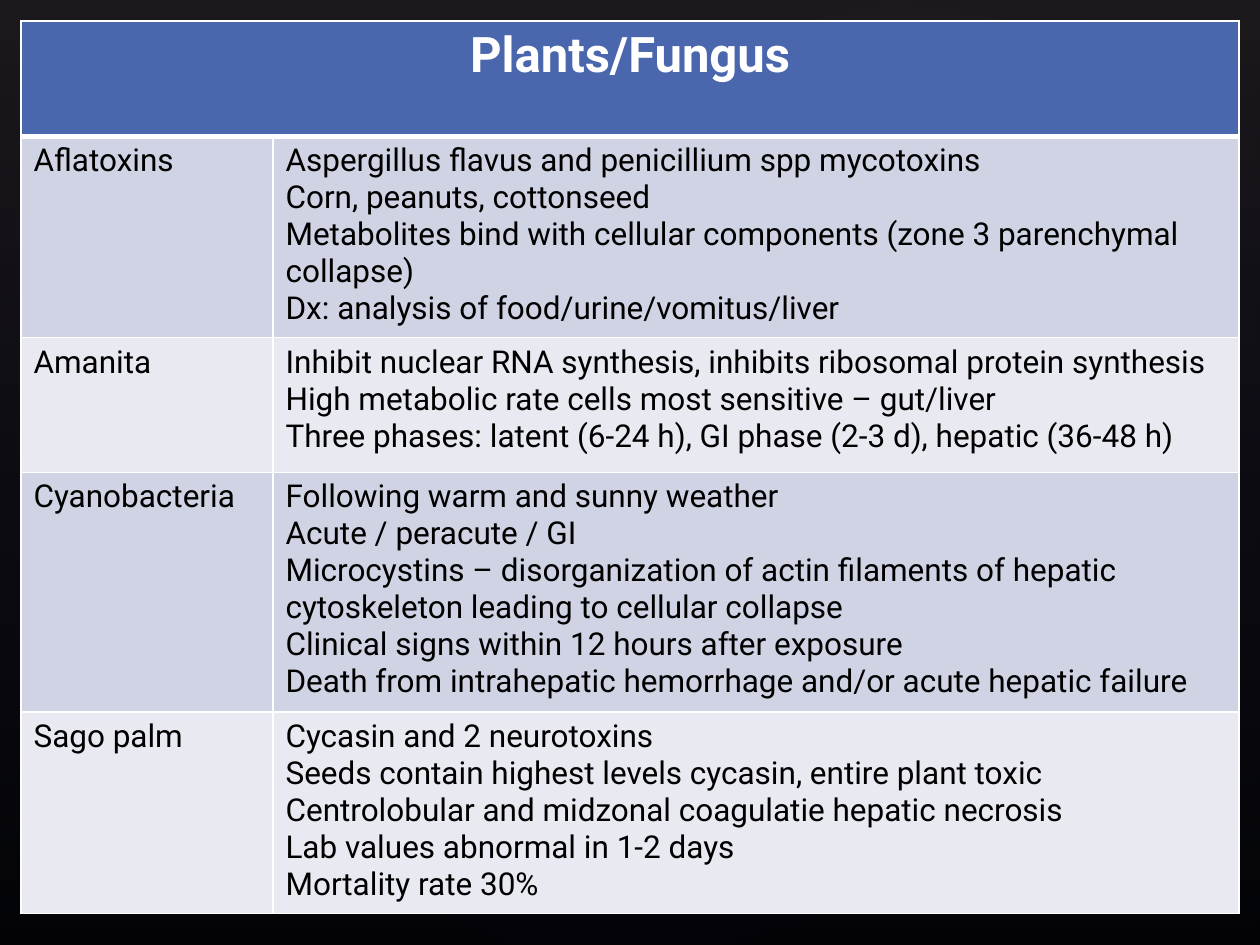
from dataclasses import dataclass
from typing import Optional

from lxml.etree import SubElement
from pptx import Presentation
from pptx.dml.color import RGBColor
from pptx.enum.shapes import MSO_SHAPE
from pptx.enum.text import PP_ALIGN
from pptx.oxml.ns import qn
from pptx.slide import Slide
from pptx.table import _Cell
from pptx.util import Pt

FONT = "Roboto"
WHITE = RGBColor(0xFF, 0xFF, 0xFF)
BLACK = RGBColor(0x00, 0x00, 0x00)
BLUE = RGBColor(0x4A, 0x66, 0xAC)
NAVY = RGBColor(0x24, 0x28, 0x52)
PLUM = RGBColor(0x50, 0x46, 0x52)
MIST = RGBColor(0xC4, 0xBC, 0xC6)
BAND_DARK = RGBColor(0xD0, 0xD3, 0xE3)
BAND_LIGHT = RGBColor(0xE9, 0xEA, 0xF1)

MARGIN = Pt(12)
COL_WIDTHS = (Pt(144), Pt(552))
HEADER_HEIGHT = Pt(66)
THIN, THICK = Pt(1), Pt(3)


@dataclass
class Glow:
    """A rotated ellipse that fades out from its centre."""
    left: float
    top: float
    width: float
    height: float
    rotation: float
    opacity: int


@dataclass
class Toxin:
    name: str
    height: int
    facts: list[str]


GLOWS = [
    Glow(108, 82, 570, 449, 328.7, 7),
    Glow(-21.6, 92, 436, 353, 294.3, 8),
    Glow(257.8, 9.4, 510.5, 374.4, 328.7, 8),
]

TOXINS = [
    Toxin("Aflatoxins", Pt(115), [
        "Aspergillus flavus and penicillium spp mycotoxins",
        "Corn, peanuts, cottonseed",
        "Metabolites bind with cellular components (zone 3 parenchymal collapse)",
        "Dx: analysis of food/urine/vomitus/liver",
    ]),
    Toxin("Amanita", Pt(77), [
        "Inhibit nuclear RNA synthesis, inhibits ribosomal protein synthesis",
        "High metabolic rate cells most sensitive – gut/liver",
        "Three phases: latent (6-24 h), GI phase (2-3 d), hepatic (36-48 h)",
    ]),
    Toxin("Cyanobacteria", Pt(137), [
        "Following warm and sunny weather",
        "Acute / peracute / GI",
        "Microcystins – disorganization of actin filaments of hepatic "
        "cytoskeleton leading to cellular collapse",
        "Clinical signs within 12 hours after exposure",
        "Death from intrahepatic hemorrhage and/or acute hepatic failure",
    ]),
    Toxin("Sago palm", Pt(115), [
        "Cycasin and 2 neurotoxins",
        "Seeds contain highest levels cycasin, entire plant toxic",
        "Centrolobular and midzonal coagulatie hepatic necrosis",
        "Lab values abnormal in 1-2 days",
        "Mortality rate 30%",
    ]),
]


def add_backdrop(s: Slide, kind: MSO_SHAPE, box: tuple[float, ...],
                 stops: list[tuple[int, RGBColor, int]],
                 rotation: Optional[float] = None) -> None:
    """Add a translucent shape: radial if it is an ellipse, else top to bottom."""
    sp = s.shapes.add_shape(kind, *(Pt(v) for v in box))
    sp.shadow.inherit = False
    sp.line.fill.background()
    if rotation:
        sp.rotation = rotation
    sp.fill.gradient()
    grad = sp._element.spPr.find(qn("a:gradFill"))
    for child in list(grad):
        grad.remove(child)
    gs_list = SubElement(grad, qn("a:gsLst"))
    for position, color, opacity in stops:
        gs = SubElement(gs_list, qn("a:gs"), pos=str(position * 1000))
        clr = SubElement(gs, qn("a:srgbClr"), val=str(color))
        SubElement(clr, qn("a:alpha"), val=str(opacity * 1000))
    if kind == MSO_SHAPE.OVAL:
        radial = SubElement(grad, qn("a:path"), {"path": "circle"})
        SubElement(radial, qn("a:fillToRect"), dict.fromkeys("ltrb", "50000"))
    else:
        SubElement(grad, qn("a:lin"), ang="5400000", scaled="0")


def style_cell(cell: _Cell, fill: RGBColor, top: int = THIN, bottom: int = THIN) -> None:
    """Draw white borders, then the fill, which must follow them in the XML."""
    tc_pr = cell._tc.get_or_add_tcPr()
    for side, width in (("L", THIN), ("R", THIN), ("T", top), ("B", bottom)):
        ln = SubElement(tc_pr, qn(f"a:ln{side}"), w=str(int(width)))
        solid = SubElement(ln, qn("a:solidFill"))
        SubElement(solid, qn("a:srgbClr"), val=str(WHITE))
    cell.fill.solid()
    cell.fill.fore_color.rgb = fill


def write_cell(cell: _Cell, lines: list[str], size: int, color: RGBColor,
               bold: bool = False, align: PP_ALIGN = PP_ALIGN.LEFT) -> None:
    tf = cell.text_frame
    for i, line in enumerate(lines):
        p = tf.add_paragraph() if i else tf.paragraphs[0]
        p.alignment = align
        r = p.add_run()
        r.text = line
        r.font.name, r.font.size, r.font.bold = FONT, size, bold
        r.font.color.rgb = color


prs = Presentation()
prs.slide_width, prs.slide_height = Pt(720), Pt(540)
s = prs.slides.add_slide(prs.slide_layouts[6])

# Background: black under a gradient veil and three faint glows
s.background.fill.solid()
s.background.fill.fore_color.rgb = BLACK
add_backdrop(s, MSO_SHAPE.RECTANGLE, (0, 0, 720, 540),
             [(0, PLUM, 36), (100, NAVY, 10)])
for glow in GLOWS:
    add_backdrop(s, MSO_SHAPE.OVAL, (glow.left, glow.top, glow.width, glow.height),
                 [(0, MIST, glow.opacity), (58, NAVY, 0)], glow.rotation)

# Table frame
table_height = HEADER_HEIGHT + sum(toxin.height for toxin in TOXINS)
table = s.shapes.add_table(len(TOXINS) + 1, len(COL_WIDTHS), MARGIN, MARGIN,
                           sum(COL_WIDTHS), table_height).table
for column, width in zip(table.columns, COL_WIDTHS):
    column.width = width

# Header across both columns
table.rows[0].height = HEADER_HEIGHT
for cell in table.rows[0].cells:
    style_cell(cell, BLUE, bottom=THICK)
header = table.cell(0, 0)
header.merge(table.cell(0, 1))
write_cell(header, ["Plants/Fungus"], Pt(28), WHITE, True, PP_ALIGN.CENTER)

# One banded row for each toxin
for i, toxin in enumerate(TOXINS, start=1):
    table.rows[i].height = toxin.height
    for cell, lines in zip(table.rows[i].cells, ([toxin.name], toxin.facts)):
        style_cell(cell, BAND_DARK if i % 2 else BAND_LIGHT,
                   top=THICK if i == 1 else THIN)
        write_cell(cell, lines, Pt(18), BLACK)

prs.save("out.pptx")
